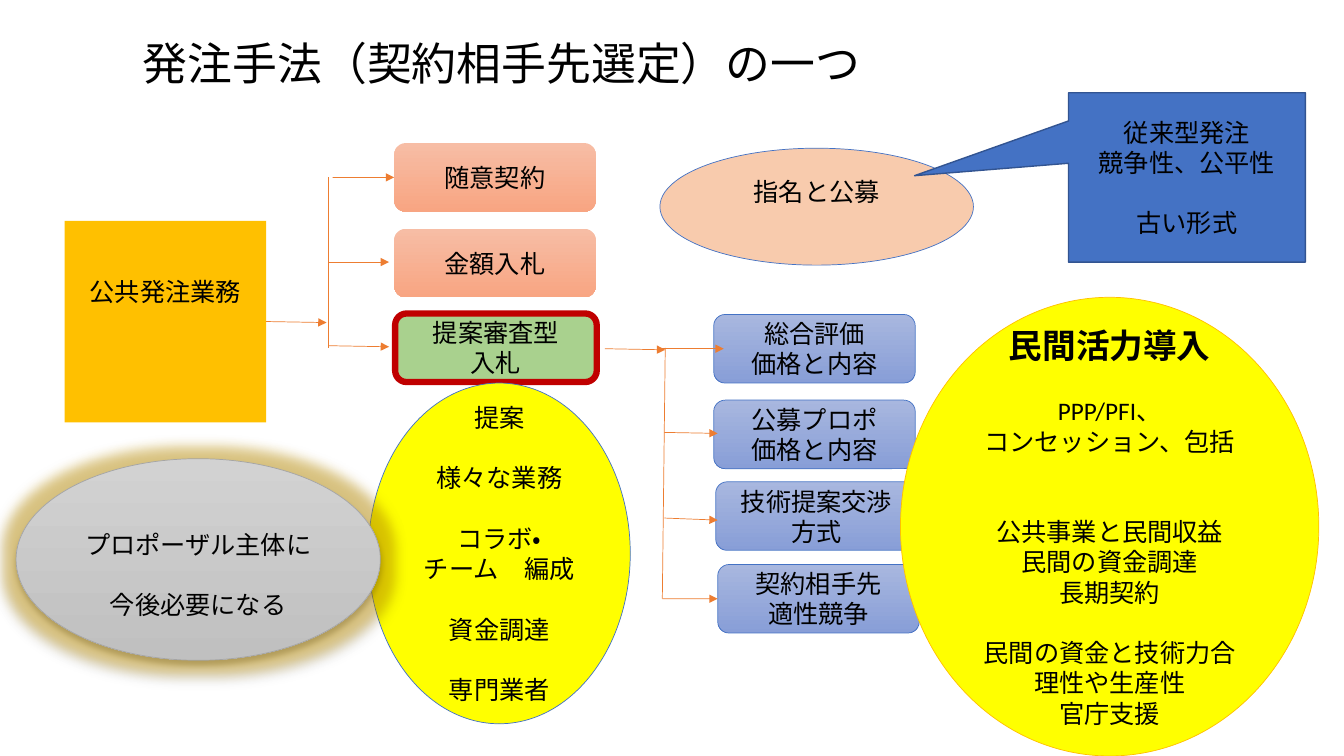
from dataclasses import dataclass
from typing import Any, NamedTuple, Optional

import lxml.etree
import pptx
import pptx.dml.color
import pptx.enum.lang
import pptx.enum.shapes
import pptx.enum.text
import pptx.oxml
import pptx.oxml.ns
import pptx.util

WIDTH = pptx.util.Inches(13.33)
HEIGHT = pptx.util.Inches(7.5)
LINE_PT = 21.6  # height of one 18 pt line of body text
COLORS = {
    "text": "000000", "amber": "FFC000", "salmon": "F7BDA5", "salmon_deep": "F8A582",
    "sky": "A8B7DF", "sky_deep": "889ED7", "blue": "4472C4", "navy": "325491",
    "green": "A9D18E", "red": "C00000", "peach": "F8CBAD", "yellow": "FFFF00",
    "silver": "D2D2D2", "silver_deep": "C0C0C0", "gray": "A5A5A5",
    "orange": "ED7D31", "glow": "D9A300",
}
KIND = pptx.enum.shapes.MSO_SHAPE
ALIGN = pptx.enum.text.PP_ALIGN


class Line(NamedTuple):
    text: str
    lines_before: int = 0
    size: float = 18
    bold: bool = False


class Box(NamedTuple):
    """Left, top, width and height in percent of the slide."""
    left: float
    top: float
    width: float = 15
    height: float = 9.07


class Look(NamedTuple):
    kind: Any
    fill: str
    fill_end: Optional[str] = None
    outline: Optional[str] = None
    outline_pt: float = 0.5


@dataclass
class Node:
    box: Box
    look: Look
    lines: list[Line]
    lines_above: int = 0
    lines_below: int = 0


@dataclass
class Link:
    """Ends are in percent of the slide; source and target are joined nodes."""
    start: tuple[float, float]
    end: tuple[float, float]
    arrow: bool = True
    source: Any = None
    target: Any = None


def across(percent: float) -> int:
    return round(WIDTH * percent / 100)


def down(percent: float) -> int:
    return round(HEIGHT * percent / 100)


def place(box: Box) -> tuple[int, int, int, int]:
    return across(box.left), down(box.top), across(box.width), down(box.height)


def rgb(name: str) -> pptx.dml.color.RGBColor:
    return pptx.dml.color.RGBColor.from_string(COLORS[name])


def write(frame: Any, lines: list[Line], *, align: Any = ALIGN.CENTER, spacing: float = 1.0,
          lines_above: int = 0, lines_below: int = 0) -> None:
    frame.word_wrap = True
    frame.vertical_anchor = pptx.enum.text.MSO_ANCHOR.MIDDLE
    frame.margin_top = pptx.util.Pt(3.6 + LINE_PT * lines_above)
    frame.margin_bottom = pptx.util.Pt(3.6 + LINE_PT * lines_below)
    for index, line in enumerate(lines):
        paragraph = frame.add_paragraph() if index else frame.paragraphs[0]
        paragraph.alignment = align
        paragraph.line_spacing = spacing
        paragraph.space_before = pptx.util.Pt(LINE_PT * line.lines_before)
        run = paragraph.add_run()
        run.text = line.text
        run.font.name = "Calibri"
        run.font.size = pptx.util.Pt(line.size)
        run.font.bold = line.bold
        run.font.color.rgb = rgb("text")
        run.font.language_id = pptx.enum.lang.MSO_LANGUAGE_ID.JAPANESE


def draw_node(shapes: Any, node: Node) -> Any:
    look = node.look
    shape = shapes.add_shape(look.kind, *place(node.box))
    shape.shadow.inherit = False
    if look.fill_end:
        shape.fill.gradient()
        shape.fill.gradient_angle = 270
        for stop, name in zip(shape.fill.gradient_stops, (look.fill, look.fill_end)):
            stop.color.rgb = rgb(name)
    else:
        shape.fill.solid()
        shape.fill.fore_color.rgb = rgb(look.fill)
    if look.outline:
        shape.line.color.rgb = rgb(look.outline)
        shape.line.width = pptx.util.Pt(look.outline_pt)
    else:
        shape.line.fill.background()
    write(shape.text_frame, node.lines, lines_above=node.lines_above, lines_below=node.lines_below)
    return shape


def draw_link(shapes: Any, link: Link) -> None:
    (x1, y1), (x2, y2) = link.start, link.end
    connector = shapes.add_connector(pptx.enum.shapes.MSO_CONNECTOR.STRAIGHT,
                                     across(x1), down(y1), across(x2), down(y2))
    if link.source is not None:
        connector.begin_connect(link.source, 3)
    if link.target is not None:
        connector.end_connect(link.target, 1)
    connector.line.color.rgb = rgb("orange")
    connector.line.width = pptx.util.Pt(0.5)
    if link.arrow:
        lxml.etree.SubElement(connector.line._get_or_add_ln(),
                              pptx.oxml.ns.qn("a:tailEnd"), type="triangle")
    lxml.etree.SubElement(connector._element.spPr, pptx.oxml.ns.qn("a:effectLst"))


def add_halo(shape: Any) -> None:
    """Give the shape a golden glow and a soft shadow below."""
    effects = shape._element.spPr.find(pptx.oxml.ns.qn("a:effectLst"))
    halo = {"glow": ("glow", {"rad": "228600"}),
            "outerShdw": ("text", {"blurRad": "50800", "dist": "38100", "dir": "5400000"})}
    for tag, (color, settings) in halo.items():
        effect = lxml.etree.SubElement(effects, pptx.oxml.ns.qn(f"a:{tag}"), settings)
        tint = lxml.etree.SubElement(effect, pptx.oxml.ns.qn("a:srgbClr"), val=COLORS[color])
        lxml.etree.SubElement(tint, pptx.oxml.ns.qn("a:alpha"), val="40000")


def main() -> None:
    deck = pptx.Presentation()
    deck.slide_width, deck.slide_height = WIDTH, HEIGHT
    shapes = deck.slides.add_slide(deck.slide_layouts[6]).shapes

    heading = shapes.add_textbox(*place(Box(9.9, 5.33, 74.1, 6.93)))
    write(heading.text_frame, [Line("発注手法（契約相手先選定）の一つ", size=32)],
          align=ALIGN.LEFT, spacing=0.9)

    bidding = Look(KIND.ROUNDED_RECTANGLE, "salmon", "salmon_deep")
    proposal = Look(KIND.ROUNDED_RECTANGLE, "green", outline="red", outline_pt=4.5)
    method = Look(KIND.ROUNDED_RECTANGLE, "sky", "sky_deep", "blue")

    public_work = draw_node(shapes, Node(Box(4.8, 29.2, 15, 26.67), Look(KIND.RECTANGLE, "amber"),
                                         [Line("公共発注業務")], lines_below=2))
    options = [draw_node(shapes, Node(box, look, [Line(text) for text in texts]))
               for box, look, texts in (
                   (Box(29.33, 18.93), bidding, ["随意契約"]),
                   (Box(29.33, 30.27), bidding, ["金額入札"]),
                   (Box(29.4, 41.47), proposal, ["提案審査型", "入札"]),
                   (Box(53.1, 41.6), method, ["総合評価", "価格と内容"]),
                   (Box(53.1, 52.93), method, ["公募プロポ", "価格と内容"]),
                   (Box(53.25, 63.73), method, ["技術提案交渉方式"]),
                   (Box(53.4, 74.67), method, ["契約相手先", "適性競争"]))]
    draw_node(shapes, Node(Box(49.1, 19.6, 23.33, 15.47), Look(KIND.OVAL, "peach", outline="blue"),
                           [Line("指名と公募")], lines_below=1))
    draw_node(shapes, Node(
        Box(67, 39.33, 31.13, 60.67), Look(KIND.OVAL, "yellow", outline="amber"),
        [Line("民間活力導入", size=24, bold=True), Line("PPP/PFI、", 1),
         Line("コンセッション、包括"), Line("公共事業と民間収益", 2), Line("民間の資金調達"),
         Line("長期契約"), Line("民間の資金と技術力合理性や生産性", 1), Line("官庁支援")]))

    for link in (
            Link((19.8, 42.53), (24.3, 42.67), source=public_work),
            Link((24.45, 23.47), (24.45, 46), arrow=False),
            Link((24.75, 23.47), (29.33, 23.47), target=options[0]),
            Link((24.45, 34.67), (28.95, 34.67)),
            Link((24.45, 45.73), (28.95, 45.87)),
            Link((45, 46.13), (49.5, 46.27)),
            Link((49.5, 46), (49.28, 79.2), arrow=False),
            Link((49.28, 46.13), (53.85, 46.13)),
            Link((49.43, 57.2), (53.4, 57.33)),
            Link((49.43, 68.53), (53.4, 68.8)),
            Link((49.28, 79.2), (53.4, 79.2), target=options[-1])):
        draw_link(shapes, link)

    draw_node(shapes, Node(
        Box(27.4, 50.67, 19.5, 45.07), Look(KIND.OVAL, "yellow", outline="blue"),
        [Line("提案"), Line("様々な業務", 1), Line("コラボ・", 1), Line("チーム　編成"),
         Line("資金調達", 1), Line("専門業者", 1)]))
    outlook = draw_node(shapes, Node(
        Box(1.2, 60.67, 27.1, 26.67), Look(KIND.OVAL, "silver", "silver_deep", "gray"),
        [Line("プロポーザル主体に"), Line("今後必要になる", 1)], lines_above=1))
    add_halo(outlook)
    traditional = draw_node(shapes, Node(
        Box(79.5, 12.27, 17.63, 22.4),
        Look(KIND.RECTANGULAR_CALLOUT, "blue", outline="navy", outline_pt=1),
        [Line("従来型発注"), Line("競争性、公平性"), Line("古い形式", 1)]))
    traditional.adjustments[0] = -1.15
    traditional.adjustments[1] = -0.01

    deck.save("out.pptx")


if __name__ == "__main__":
    main()
